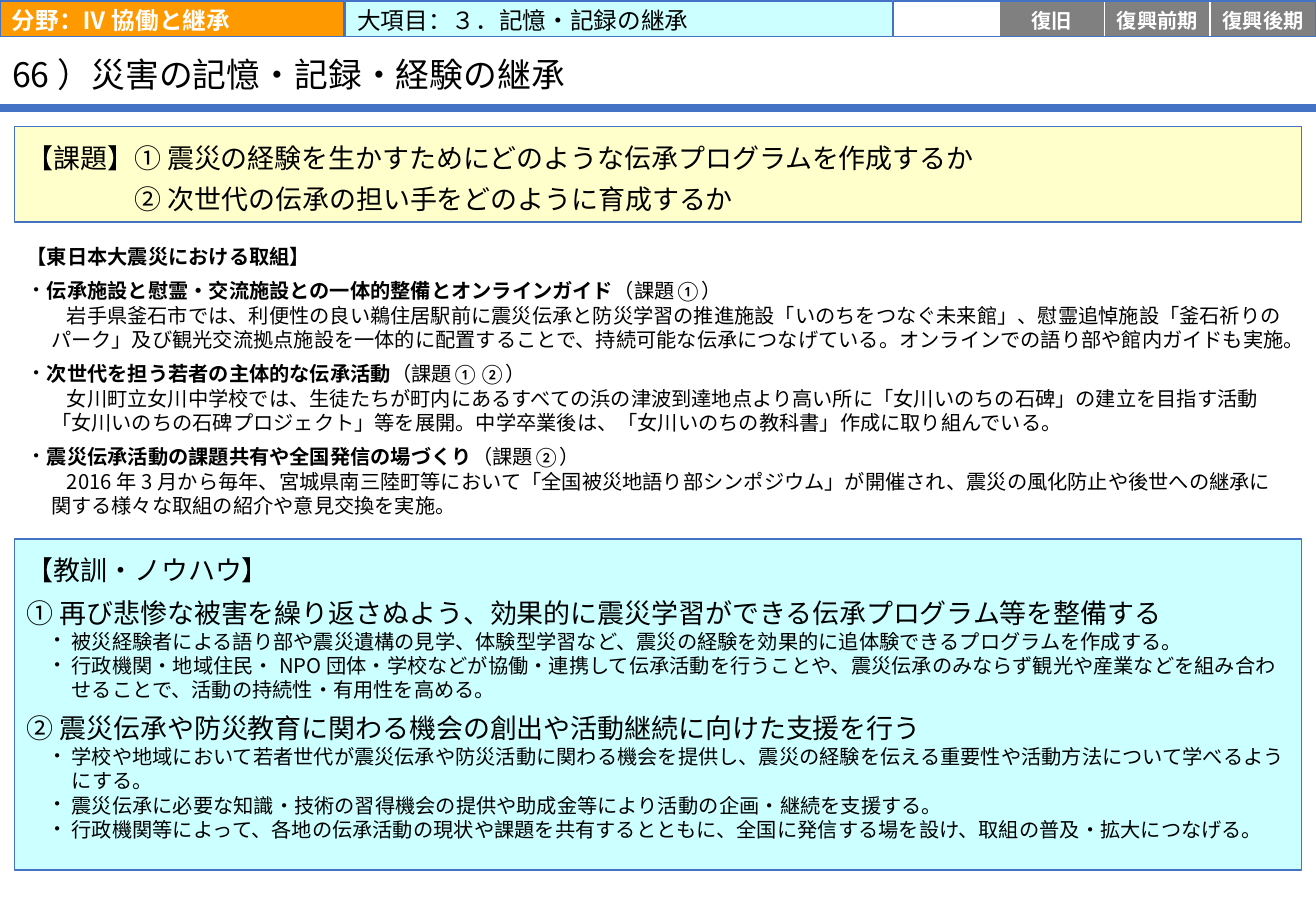
from dataclasses import dataclass

from lxml import etree
from pptx import Presentation
from pptx.dml.color import RGBColor
from pptx.enum.shapes import MSO_CONNECTOR, MSO_SHAPE
from pptx.enum.text import MSO_ANCHOR, MSO_AUTO_SIZE, PP_ALIGN
from pptx.oxml.ns import qn
from pptx.util import Inches, Pt

RECTANGLE = MSO_SHAPE.RECTANGLE
STRAIGHT = MSO_CONNECTOR.STRAIGHT
LEFT, CENTER = PP_ALIGN.LEFT, PP_ALIGN.CENTER
TOP, MIDDLE = MSO_ANCHOR.TOP, MSO_ANCHOR.MIDDLE
NO_AUTOFIT = MSO_AUTO_SIZE.NONE


@dataclass(frozen=True)
class Theme:
    heading_font: str = "Calibri"
    text_font: str = "Noto Sans CJK JP"
    black: str = "000000"
    white: str = "FFFFFF"
    blue: str = "4472C4"
    orange: str = "FF9900"
    cyan: str = "CCFFFF"
    yellow: str = "FFFFCC"
    gray: str = "808080"
    title: int = 20
    section: int = 16
    tag: int = 14
    body: int = 12


THEME = Theme()
PAGE_WIDTH, PAGE_HEIGHT = 10.83, 7.5
BOX_LEFT, BOX_WIDTH = 0.12, 10.59
TAG_TOP, TAG_HEIGHT = 0.01, 0.29
TAG_INSETS = (0.1, 0.02, 0.1, 0)
PHASE_LEFT, PHASE_WIDTH = 7.35, 0.87
PHASES = ["", "復旧", "復興前期", "復興後期"]

ISSUES = [
    ("【課題】① 震災の経験を生かすためにどのような伝承プログラムを作成するか", 0),
    ("② 次世代の伝承の担い手をどのように育成するか", 0.89),
]
INITIATIVES = [
    ("伝承施設と慰霊・交流施設との一体的整備とオンラインガイド", "（課題①）",
     "岩手県釜石市では、利便性の良い鵜住居駅前に震災伝承と防災学習の推進施設「いのちをつなぐ未来館」、慰霊追悼施設「釜石祈りのパーク」及び観光交流拠点施設を一体的に配置することで、持続可能な伝承につなげている。オンラインでの語り部や館内ガイドも実施。"),
    ("次世代を担う若者の主体的な伝承活動", "（課題①②）",
     "女川町立女川中学校では、生徒たちが町内にあるすべての浜の津波到達地点より高い所に「女川いのちの石碑」の建立を目指す活動「女川いのちの石碑プロジェクト」等を展開。中学卒業後は、「女川いのちの教科書」作成に取り組んでいる。"),
    ("震災伝承活動の課題共有や全国発信の場づくり", "（課題②）",
     "2016年3月から毎年、宮城県南三陸町等において「全国被災地語り部シンポジウム」が開催され、震災の風化防止や後世への継承に関する様々な取組の紹介や意見交換を実施。"),
]
LESSONS = [
    ("① 再び悲惨な被害を繰り返さぬよう、効果的に震災学習ができる伝承プログラム等を整備する", [
        "被災経験者による語り部や震災遺構の見学、体験型学習など、震災の経験を効果的に追体験できるプログラムを作成する。",
        "行政機関・地域住民・NPO団体・学校などが協働・連携して伝承活動を行うことや、震災伝承のみならず観光や産業などを組み合わせることで、活動の持続性・有用性を高める。",
    ]),
    ("② 震災伝承や防災教育に関わる機会の創出や活動継続に向けた支援を行う", [
        "学校や地域において若者世代が震災伝承や防災活動に関わる機会を提供し、震災の経験を伝える重要性や活動方法について学べるようにする。",
        "震災伝承に必要な知識・技術の習得機会の提供や助成金等により活動の企画・継続を支援する。",
        "行政機関等によって、各地の伝承活動の現状や課題を共有するとともに、全国に発信する場を設け、取組の普及・拡大につなげる。",
    ]),
]


def color(code):
    return RGBColor.from_string(code)


def place(shape, left, top, width, height):
    shape.left, shape.top = Inches(left), Inches(top)
    shape.width, shape.height = Inches(width), Inches(height)


def paint(shape, fill, line):
    if fill:
        shape.fill.solid()
        shape.fill.fore_color.rgb = color(fill)
    else:
        shape.fill.background()
    shape.line.color.rgb = color(line)
    shape.line.width = Pt(1)


def set_frame(shape, insets, anchor=MIDDLE):
    frame = shape.text_frame
    frame.word_wrap = True
    frame.auto_size = NO_AUTOFIT
    frame.vertical_anchor = anchor
    (frame.margin_left, frame.margin_top,
     frame.margin_right, frame.margin_bottom) = map(Inches, insets)
    return frame


def add_box(shapes, bounds, fill, line):
    box = shapes.add_shape(RECTANGLE, *map(Inches, bounds))
    box.shadow.inherit = False
    paint(box, fill, line)
    return box


def add_span(para, text, size, font=THEME.text_font, bold=False, ink=THEME.black):
    span = para.add_run()
    span.text = text
    span.font.size = Pt(size)
    span.font.bold = bold
    span.font.color.rgb = color(ink)
    span.font.name = font
    etree.SubElement(span.font._element, qn("a:ea")).set("typeface", font)


def add_para(frame, before=0, margin=0, indent=0, bullet=None, align=LEFT):
    first = frame.paragraphs[0]
    para = frame.add_paragraph() if first.runs else first
    para.alignment = align
    para.space_before = Pt(before)
    properties = para._p.get_or_add_pPr()
    properties.set("marL", str(Inches(margin)))
    properties.set("indent", str(Inches(indent)))
    if bullet:
        etree.SubElement(properties, qn("a:buChar")).set("char", bullet)
    else:
        etree.SubElement(properties, qn("a:buNone"))
    return para


def add_tag(shapes, left, width, text, fill, line, ink, size=THEME.tag,
            bold=True, insets=TAG_INSETS, align=LEFT):
    tag = add_box(shapes, (left, TAG_TOP, width, TAG_HEIGHT), fill, line)
    if text:
        para = add_para(set_frame(tag, insets), align=align)
        add_span(para, text, size, THEME.heading_font, bold, ink)


def add_rule(page):
    rule = page.shapes.add_connector(
        STRAIGHT, 0, Inches(0.89), Inches(PAGE_WIDTH), Inches(0.89))
    rule.line.color.rgb = color(THEME.blue)
    rule.line.width = Pt(4.5)
    etree.SubElement(rule._element.spPr, qn("a:effectLst"))


def add_phases(page):
    group = page.shapes.add_group_shape()
    for index, phase in enumerate(PHASES):
        add_tag(group.shapes, PHASE_LEFT + index * PHASE_WIDTH, PHASE_WIDTH, phase,
                THEME.gray if phase else THEME.white, THEME.white, THEME.white,
                THEME.body, insets=(0, 0.02, 0, 0), align=CENTER)
    add_box(group.shapes, (PHASE_LEFT, TAG_TOP, PHASE_WIDTH * len(PHASES), TAG_HEIGHT),
            None, THEME.blue)


def fill_title(title):
    place(title, 0, 0.32, 9.48, 0.58)
    para = add_para(set_frame(title, (0.1, 0.04, 0.1, 0)))
    para.line_spacing = 0.9
    add_span(para, "66）災害の記憶・記録・経験の継承", THEME.title)


def add_issues(page):
    box = add_box(page.shapes, (BOX_LEFT, 1.04, BOX_WIDTH, 0.79), THEME.yellow, THEME.blue)
    frame = set_frame(box, (0.1, 0.12, 0.1, 0.12))
    for text, margin in ISSUES:
        para = add_para(frame, margin=margin)
        para.line_spacing = Pt(24)
        add_span(para, text, THEME.section)


def fill_initiatives(body):
    place(body, BOX_LEFT, 1.88, BOX_WIDTH, 2.51)
    frame = set_frame(body, (0.1, 0.05, 0.1, 0.05))
    add_span(add_para(frame), "【東日本大震災における取組】", THEME.body, THEME.heading_font, True)
    for heading, issue, detail in INITIATIVES:
        para = add_para(frame, 6, 0.07, -0.07, "・")
        add_span(para, heading, THEME.body, THEME.heading_font, True)
        add_span(para, issue, THEME.body, THEME.heading_font)
        add_span(add_para(frame, margin=0.2, indent=0.13), detail, THEME.body)


def fill_lessons(body):
    place(body, BOX_LEFT, 4.44, BOX_WIDTH, 2.72)
    paint(body, THEME.cyan, THEME.blue)
    frame = set_frame(body, (0.1, 0.12, 0.1, 0), TOP)
    add_span(add_para(frame), "【教訓・ノウハウ】", THEME.section)
    for lesson, actions in LESSONS:
        add_span(add_para(frame, 6), lesson, THEME.section)
        for action in actions:
            add_span(add_para(frame, 0, 0.37, -0.2, "・"), action, THEME.body)


def main():
    deck = Presentation()
    deck.slide_width, deck.slide_height = Inches(PAGE_WIDTH), Inches(PAGE_HEIGHT)
    page = deck.slides.add_slide(deck.slide_layouts[3])
    title, initiatives, lessons = page.placeholders
    add_rule(page)
    fill_title(title)
    add_tag(page.shapes, 0, 2.83, "分野：Ⅳ 協働と継承", THEME.orange, THEME.blue, THEME.white)
    add_tag(page.shapes, 2.84, 4.53, "大項目：３．記憶・記録の継承", THEME.cyan, THEME.blue,
            THEME.black, bold=False)
    add_phases(page)
    add_issues(page)
    fill_initiatives(initiatives)
    fill_lessons(lessons)
    deck.save("out.pptx")


if __name__ == "__main__":
    main()
